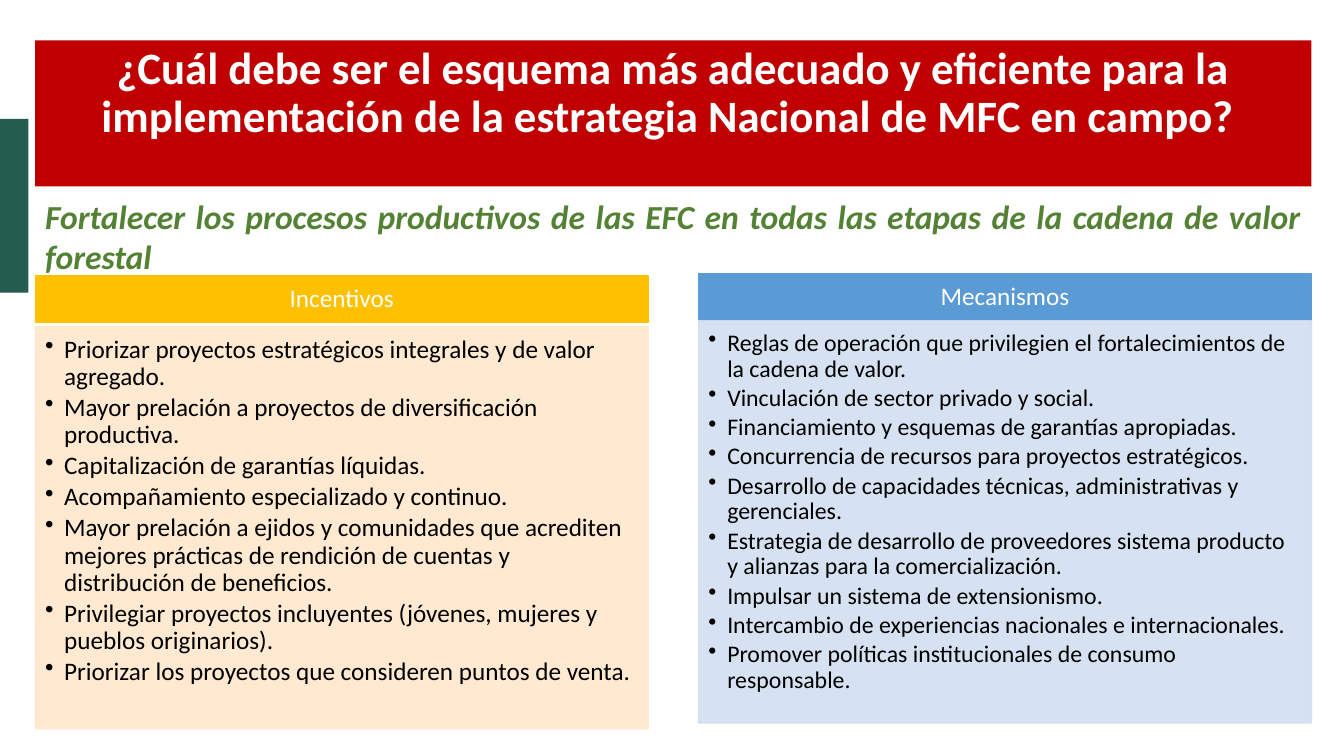
"""Build the slide on incentives and mechanisms for the national MFC strategy."""
from pptx import Presentation
from pptx.dml.color import RGBColor
from pptx.enum.shapes import MSO_SHAPE
from pptx.enum.text import MSO_ANCHOR, PP_ALIGN
from pptx.oxml.ns import qn
from pptx.util import Pt
from lxml import etree

RECT = MSO_SHAPE.RECTANGLE
TOP, MIDDLE = MSO_ANCHOR.TOP, MSO_ANCHOR.MIDDLE
LEFT, CENTER, JUSTIFY = PP_ALIGN.LEFT, PP_ALIGN.CENTER, PP_ALIGN.JUSTIFY

MARGIN, FULL_W = 25.2, 911.5
COLUMN_W, HEADER_H, BODY_H = 437.8, 33.8, 287.3

INCENTIVES = [
    "Priorizar proyectos estratégicos integrales y de valor agregado.",
    "Mayor prelación a proyectos de diversificación productiva.",
    "Capitalización de garantías líquidas.",
    "Acompañamiento especializado y continuo.",
    "Mayor prelación a ejidos y comunidades que acrediten mejores prácticas de "
    "rendición de cuentas y distribución de beneficios.",
    "Privilegiar proyectos incluyentes (jóvenes, mujeres y pueblos originarios).",
    "Priorizar los proyectos que consideren puntos de venta.",
]
MECHANISMS = [
    "Reglas de operación que privilegien el fortalecimientos de la cadena de valor.",
    "Vinculación de sector privado y social.",
    "Financiamiento y esquemas de garantías apropiadas.",
    "Concurrencia de recursos para proyectos estratégicos.",
    "Desarrollo de capacidades técnicas, administrativas y gerenciales.",
    "Estrategia de desarrollo de proveedores sistema producto y alianzas para la "
    "comercialización.",
    "Impulsar un sistema de extensionismo.",
    "Intercambio de experiencias nacionales e internacionales.",
    "Promover políticas institucionales de consumo responsable.",
]


def rgb(value):
    return RGBColor.from_string(value)


class Deck:
    font = "Calibri"

    def __init__(self, prs):
        self.s = prs.slides.add_slide(prs.slide_layouts[6])

    def rect(self, x, y, w, h, fill, outlined=False, alpha=None):
        sp = self.s.shapes.add_shape(RECT, Pt(x), Pt(y), Pt(w), Pt(h))
        sp.shadow.inherit = False
        sp.fill.solid()
        sp.fill.fore_color.rgb = rgb(fill)
        if outlined:
            sp.line.color.rgb = rgb(fill)
            sp.line.width = Pt(1)
        else:
            sp.line.fill.background()
        if alpha:
            for color in sp._element.spPr.iter(qn("a:srgbClr")):
                etree.SubElement(color, qn("a:alpha"), val=str(alpha * 1000))
        return sp

    def textbox(self, x, y, w, h):
        return self.s.shapes.add_textbox(Pt(x), Pt(y), Pt(w), Pt(h))

    def set_text(self, sp, lines, size, color, align, anchor=TOP, insets=(7.2, 3.6, 7.2, 3.6),
                 spacing=0.9, after=0, bullets=False, bold=None, italic=None):
        tf = sp.text_frame
        tf.word_wrap = True
        tf.vertical_anchor = anchor
        tf.margin_left, tf.margin_top, tf.margin_right, tf.margin_bottom = map(Pt, insets)
        tf.text = "\n".join(lines)
        for p in tf.paragraphs:
            p.alignment = align
            p.line_spacing = spacing
            p.space_after = Pt(after)
            if bullets:
                self.bullet(p)
            for r in p.runs:
                r.font.name, r.font.size = self.font, Pt(size)
                r.font.bold, r.font.italic = bold, italic
                r.font.color.rgb = rgb(color)

    def bullet(self, p):
        p.level = 1
        pPr = p._p.get_or_add_pPr()
        pPr.set("marL", str(Pt(13.5)))
        pPr.set("indent", str(-Pt(13.5)))
        etree.SubElement(pPr, qn("a:buChar"), char="•")

    def column(self, x, y, gap, title, items, size, header_fill, body_fill):
        header = self.rect(x, y, COLUMN_W, HEADER_H, header_fill, outlined=True)
        self.set_text(header, [title], 18, "FFFFFF", CENTER, MIDDLE, (10, 5.8, 10, 5.8))
        body = self.rect(x, y + HEADER_H + gap, COLUMN_W, BODY_H, body_fill, True, alpha=90)
        self.set_text(body, items, size, "000000", LEFT,
                      insets=(7.2, 7.2, 0.56 * size, 0.64 * size),
                      after=0.15 * size, bullets=True)


def main():
    prs = Presentation()
    prs.slide_width, prs.slide_height = Pt(960), Pt(540)
    deck = Deck(prs)

    deck.rect(0, 85, 20.2, 124, "245C4F")
    subtitle = deck.textbox(MARGIN, 136.1, FULL_W, 94.3)
    deck.set_text(subtitle, ["Fortalecer los procesos productivos de las EFC en todas las etapas "
                             "de la cadena de valor forestal"],
                  24, "548235", JUSTIFY, spacing=1.0, bold=True, italic=True)
    title = deck.rect(MARGIN, 28.8, FULL_W, 104.4, "C00000")
    deck.set_text(title, ["¿Cuál debe ser el esquema más adecuado y eficiente para la "
                          "implementación de la estrategia Nacional de MFC en campo? "],
                  32, "FFFFFF", CENTER, bold=True)

    deck.column(MARGIN, 196.6, 2.9, "Incentivos", INCENTIVES, 18, "FFC000", "FFE8CC")
    deck.column(MARGIN + FULL_W - COLUMN_W, 195.3, 0, "Mecanismos", MECHANISMS, 17,
                "5B9BD5", "D2DFF0")
    prs.save("out.pptx")


if __name__ == "__main__":
    main()
